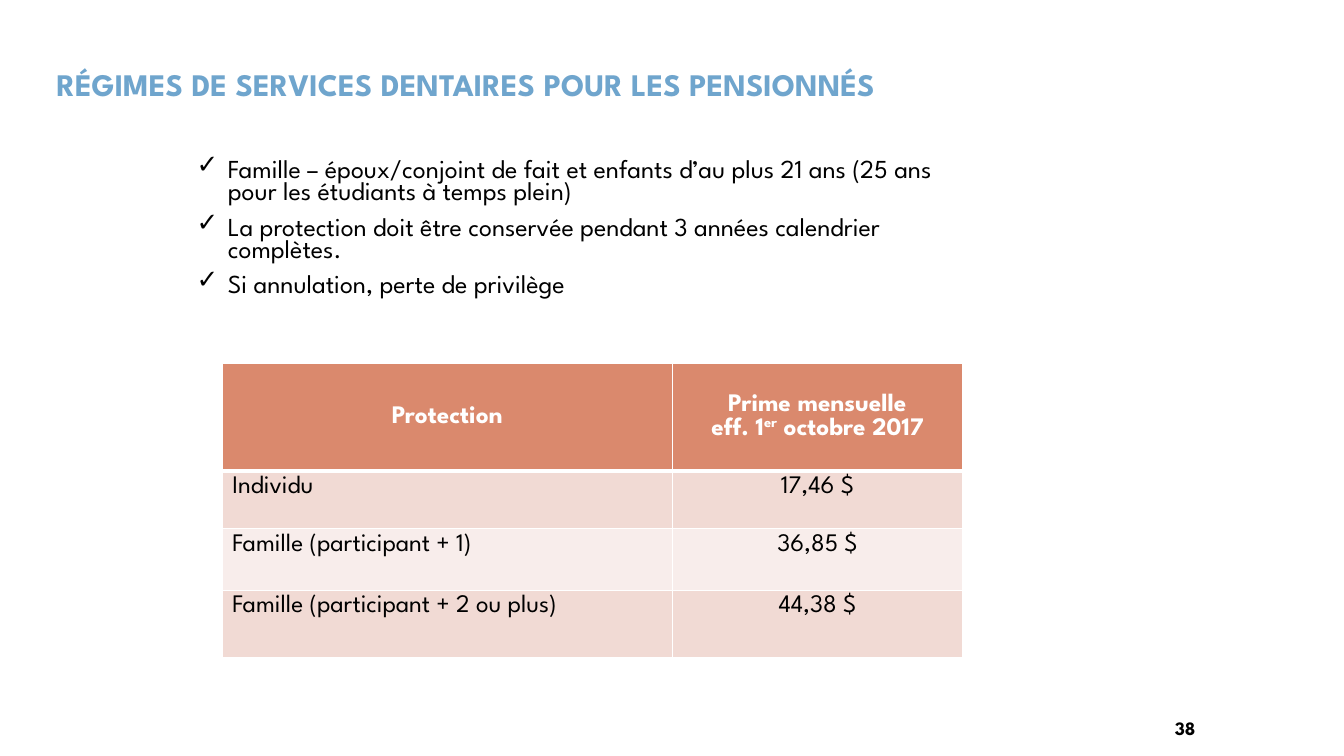
from lxml.etree import SubElement as Sub
from pptx import Presentation
from pptx.dml.color import RGBColor as Rgb
from pptx.enum.text import MSO_ANCHOR as Anchor, MSO_AUTO_SIZE as Auto, PP_ALIGN as Align
from pptx.oxml import parse_xml
from pptx.oxml.ns import nsdecls, qn
from pptx.util import Cm, Pt

FONT = "League Spartan"
HUES = {"blue": "6FA5CD", "white": "FFFFFF", "black": "000000",
        "coral": "DA896D", "rose": "F1DAD4", "pale": "F8EDEB"}
POINTS = [
    "Famille – époux/conjoint de fait et enfants d’au plus 21 ans (25 ans pour les étudiants à temps plein)",
    "La protection doit être conservée pendant 3 années calendrier complètes.",
    "Si annulation, perte de privilège",
]
# Each paragraph is a list of (text, raised) runs
HEADS = [
    [[("Protection", False)]],
    [[("Prime mensuelle", False)],
     [("eff. 1", False), ("er", True), (" octobre 2017", False)]],
]
RATES = [("Individu", "17,46 $"),
         ("Famille (participant + 1)", "36,85 $"),
         ("Famille (participant + 2 ou plus)", "44,38 $")]


def hue(name):
    return Rgb.from_string(HUES[name])


def add_run(para, text, size, color="black", bold=False):
    run = para.add_run()
    run.text = text
    font = run.font
    font.name, font.size, font.bold = FONT, Pt(size), bold
    font.color.rgb = hue(color)
    return run


def place(shape, box):
    shape.left, shape.top, shape.width, shape.height = map(Cm, box)
    frame = shape.text_frame
    frame.word_wrap = True
    frame.auto_size = Auto.NONE
    return frame


def add_title(slide, box):
    title = slide.shapes.title
    title.fill.solid()
    title.fill.fore_color.rgb = hue("white")
    frame = place(title, box)
    frame.vertical_anchor = Anchor.MIDDLE
    para = frame.paragraphs[0]
    para.alignment = Align.LEFT
    para.line_spacing = 0.9
    run = add_run(para, "régimes de services dentaires pour les pensionnés", 28, "blue", True)
    run.font._element.set("cap", "small")


def add_list(slide, box):
    frame = place(slide.placeholders[1], box)
    frame.vertical_anchor = Anchor.TOP
    for i, text in enumerate(POINTS):
        para = frame.add_paragraph() if i else frame.paragraphs[0]
        para.alignment = Align.LEFT
        para.line_spacing = 0.7
        para.space_before = Pt(10 if i else 0)
        # Check mark with a hanging indent
        props = para._p.get_or_add_pPr()
        props.set("marL", str(Cm(0.79)))
        props.set("indent", str(-Cm(0.79)))
        Sub(props, qn("a:buFont"), typeface=FONT)
        Sub(props, qn("a:buChar"), char="✓")
        add_run(para, text, 18.5)


def set_cell(cell, paras, fill, align, head=False, under=False):
    cell.fill.solid()
    cell.fill.fore_color.rgb = hue(fill)
    cell.vertical_anchor = Anchor.MIDDLE if head else Anchor.TOP
    frame = cell.text_frame
    for i, parts in enumerate(paras):
        para = frame.add_paragraph() if i else frame.paragraphs[0]
        para.alignment = align
        for text, raised in parts:
            run = add_run(para, text, 18, "white" if head else "black", head)
            if raised:
                run.font._element.set("baseline", "30000")
    # White rules, thicker under the header
    props = cell._tc.get_or_add_tcPr()
    for i, side in enumerate("LRTB"):
        thick = (head and side == "B") or (under and side == "T")
        props.insert(i, parse_xml(
            f'<a:ln{side} {nsdecls("a")} w="{Pt(3 if thick else 1)}"><a:solidFill>'
            f'<a:srgbClr val="{HUES["white"]}"/></a:solidFill></a:ln{side}>'))


def add_rates(slide, box):
    grid = slide.shapes.add_table(len(RATES) + 1, 2, *map(Cm, box)).table
    for col, width in zip(grid.columns, (11.34, 7.32)):
        col.width = Cm(width)
    for row, height in zip(grid.rows, (2.71, 1.45, 1.55, 1.7)):
        row.height = Cm(height)
    for c, paras in enumerate(HEADS):
        set_cell(grid.cell(0, c), paras, "coral", Align.CENTER, head=True)
    for r, rate in enumerate(RATES, 1):
        fill = "rose" if r % 2 else "pale"
        for c, text in enumerate(rate):
            align = Align.CENTER if c else Align.LEFT
            set_cell(grid.cell(r, c), [[(text, False)]], fill, align, under=r == 1)


def add_page(slide, box):
    frame = place(slide.shapes.add_textbox(*map(Cm, box)), box)
    para = frame.paragraphs[0]
    para.alignment = Align.RIGHT
    add_run(para, "38", 13.5, bold=True)


def main():
    deck = Presentation()
    deck.slide_width, deck.slide_height = Cm(33.87), Cm(19.05)
    slide = deck.slides.add_slide(deck.slide_layouts[1])
    add_title(slide, (1.17, 1.59, 22.86, 1.02))
    add_rates(slide, (5.6, 9.16, 18.66, 7.41))
    add_list(slide, (4.7, 3.94, 19.76, 4.17))
    add_page(slide, (24.66, 17.93, 5.72, 0.76))
    deck.save("out.pptx")


if __name__ == "__main__":
    main()
